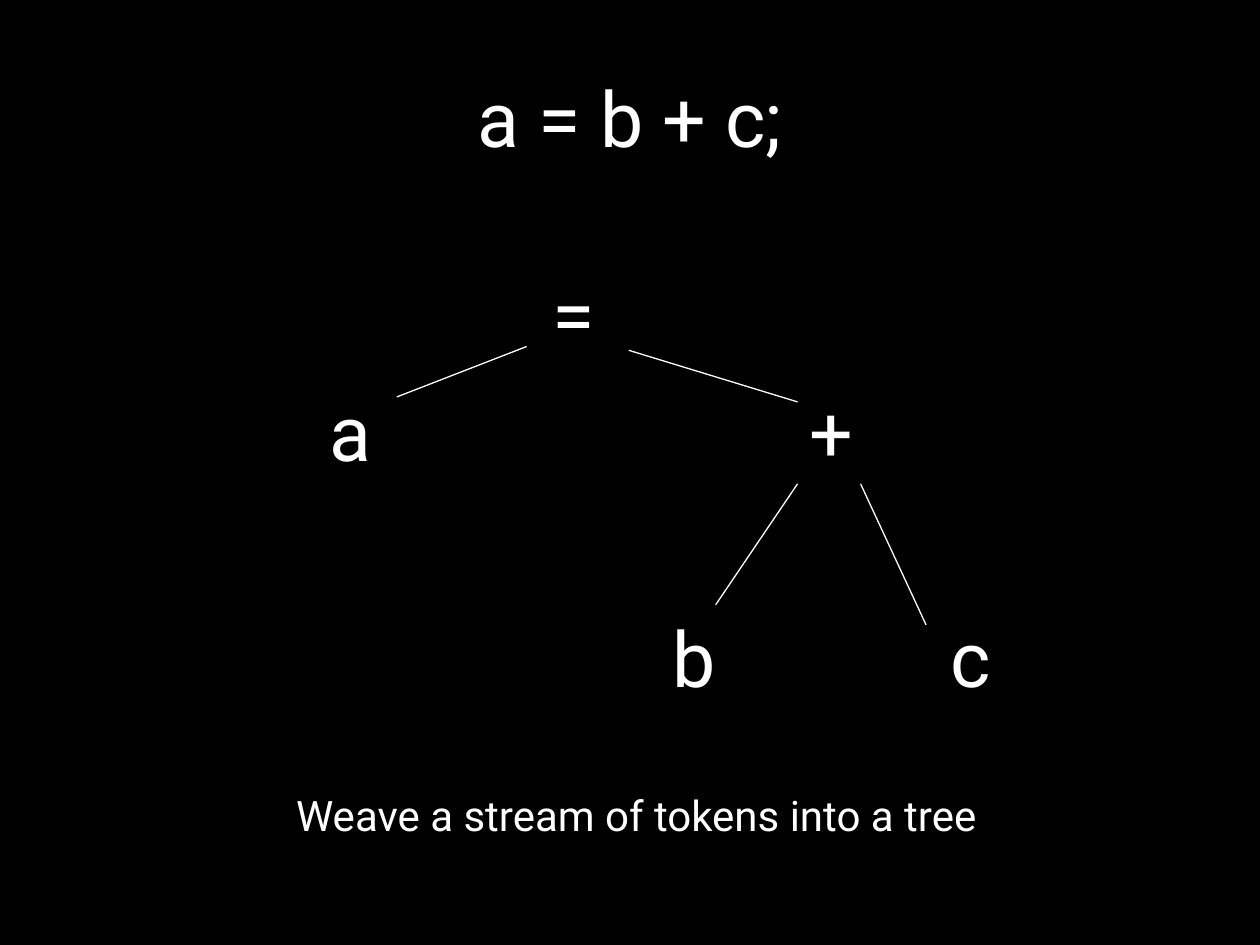
from pptx import Presentation
from pptx.dml.color import RGBColor
from pptx.enum.shapes import MSO_CONNECTOR
from pptx.enum.text import MSO_ANCHOR, PP_ALIGN
from pptx.oxml.ns import qn
from pptx.util import Inches, Pt
from lxml import etree

STRAIGHT = MSO_CONNECTOR.STRAIGHT
CENTER = PP_ALIGN.CENTER
TOP = MSO_ANCHOR.TOP
MIDDLE = MSO_ANCHOR.MIDDLE

COLORS = {"background": "000000", "foreground": "FFFFFF"}
BLANK_LAYOUT = 6
NODE_WIDTH, NODE_HEIGHT = 0.99, 0.84

NODES = [
    ("=", 4.06, 2.07),
    ("a", 2.29, 3),
    ("+", 6.1, 3),
    ("b", 5.01, 4.8),
    ("c", 7.21, 4.8),
]
BRANCHES = [
    ((3.15, 3.15), (4.18, 2.75)),
    ((6.33, 3.19), (4.99, 2.78)),
    ((5.68, 4.8), (6.33, 3.84)),
    ((6.83, 3.84), (7.35, 4.96)),
]


class TreeSlide:
    font = "Roboto"
    large = 44
    small = 24
    line_width = 0.75

    def __init__(self, deck):
        self.slide = deck.slides.add_slide(deck.slide_layouts[BLANK_LAYOUT])
        fill = self.slide.background.fill
        fill.solid()
        fill.fore_color.rgb = self.color("background")

    def color(self, name):
        return RGBColor.from_string(COLORS[name])

    def text(self, words, left, top, width, height, size, anchor=TOP):
        box = self.slide.shapes.add_textbox(
            Inches(left), Inches(top), Inches(width), Inches(height)
        )
        frame = box.text_frame
        frame.word_wrap = True
        frame.vertical_anchor = anchor
        frame.text = words
        para = frame.paragraphs[0]
        para.alignment = CENTER
        span = para.runs[0]
        span.font.name = self.font
        span.font.size = Pt(size)
        span.font.color.rgb = self.color("foreground")

    def node(self, symbol, left, top):
        self.text(symbol, left, top, NODE_WIDTH, NODE_HEIGHT, self.large)

    def branch(self, start, end):
        line = self.slide.shapes.add_connector(
            STRAIGHT, *(Inches(value) for value in start + end)
        )
        line.line.color.rgb = self.color("foreground")
        line.line.width = Pt(self.line_width)
        etree.SubElement(line._element.spPr, qn("a:effectLst"))


def main():
    deck = Presentation()
    deck.slide_width = Inches(10)
    deck.slide_height = Inches(7.5)
    page = TreeSlide(deck)
    page.text("a = b + c;", 0.5, 0.3, 9, 1.25, page.large, MIDDLE)
    page.text("Weave a stream of tokens into a tree", 0.42, 6.22, 9.26, 0.5, page.small)
    for symbol, left, top in NODES:
        page.node(symbol, left, top)
    for start, end in BRANCHES:
        page.branch(start, end)
    deck.save("out.pptx")


if __name__ == "__main__":
    main()
